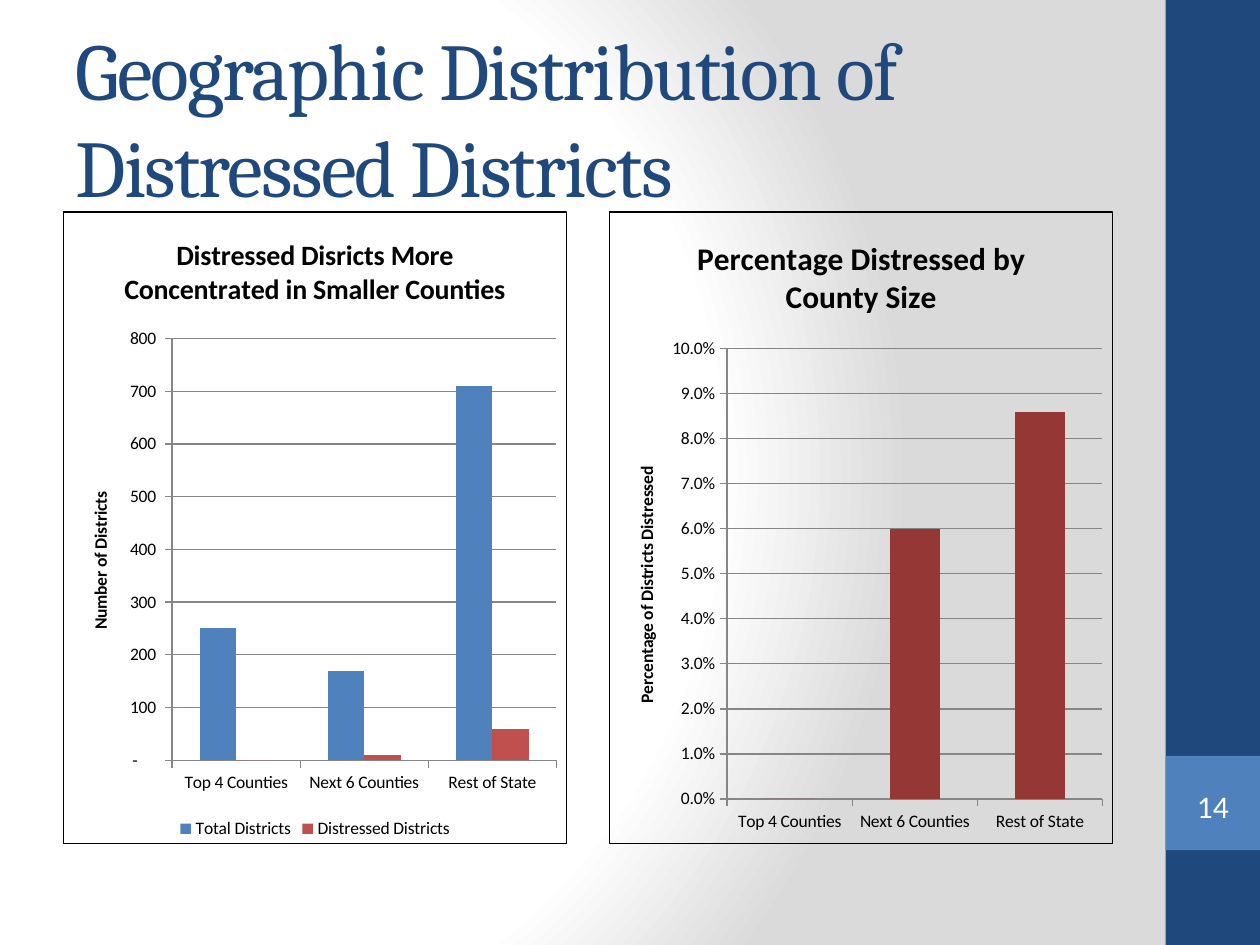
from lxml import etree
from pptx import Presentation
from pptx.chart.data import CategoryChartData
from pptx.dml.color import RGBColor
from pptx.enum.chart import XL_CHART_TYPE, XL_LEGEND_POSITION, XL_TICK_MARK
from pptx.enum.shapes import MSO_SHAPE
from pptx.enum.text import MSO_ANCHOR, MSO_AUTO_SIZE, PP_ALIGN
from pptx.oxml import parse_xml
from pptx.oxml.ns import qn
from pptx.util import Cm, Pt

DRAWING = 'xmlns:a="http://schemas.openxmlformats.org/drawingml/2006/main"'
CHART = 'xmlns:c="http://schemas.openxmlformats.org/drawingml/2006/chart"'
NAVY, BLUE, RED, DARK_RED = "1F497D", "4F81BD", "C0504D", "953735"
WHITE, GREY, BLACK, AXIS_GREY = "FFFFFF", "DADADA", "000000", "868686"
COUNTY_GROUPS = ["Top 4 Counties", "Next 6 Counties", "Rest of State"]


def colour(value):
    return RGBColor.from_string(value)


def format_text(frame, text, size, tint, font="Calibri", bold=False, align=None):
    frame.text = text
    para = frame.paragraphs[0]
    if align is not None:
        para.alignment = align
    span = para.runs[0]
    span.font.name, span.font.size, span.font.bold = font, Pt(size), bold
    span.font.color.rgb = colour(tint)
    return span


def place(shape, left, top, width, height):
    shape.left, shape.top = Cm(left), Cm(top)
    shape.width, shape.height = Cm(width), Cm(height)


def add_background(slide):
    slide.background.fill.gradient()
    gradient = next(slide.element.iter(qn("a:gradFill")))
    stops = "".join(
        f'<a:gs pos="{position * 1000}"><a:srgbClr val="{tint}"/></a:gs>'
        for position, tint in [(0, WHITE), (75, WHITE), (100, GREY)])
    gradient.getparent().replace(gradient, parse_xml(
        f'<a:gradFill {DRAWING} rotWithShape="1"><a:gsLst>{stops}</a:gsLst>'
        '<a:path path="circle"><a:fillToRect l="20000" t="50000" r="100000" b="50000"/>'
        '</a:path></a:gradFill>'))


def add_block(slide, kind, left, top, width, height, fill=None):
    box = slide.shapes.add_shape(kind, Cm(left), Cm(top), Cm(width), Cm(height))
    box.shadow.inherit = False
    box.line.fill.background()
    if fill:
        box.fill.solid()
        box.fill.fore_color.rgb = colour(fill)
    else:
        box.fill.background()
    return box


def add_sidebar(slide, left, top, width, height, number):
    # Band, square tile and page number
    tile_top = top + height * 0.8
    add_block(slide, MSO_SHAPE.RECTANGLE, left, top, width, height, NAVY)
    add_block(slide, MSO_SHAPE.RECTANGLE, left, tile_top, width, width, BLUE)
    label = add_block(slide, MSO_SHAPE.DOUBLE_BRACKET,
                      left + 0.2, tile_top + 0.45, width - 0.4, 1.1)
    label.adjustments[0] = 0.18
    frame = label.text_frame
    frame.margin_left = frame.margin_right = frame.margin_top = frame.margin_bottom = 0
    frame.vertical_anchor = MSO_ANCHOR.MIDDLE
    format_text(frame, number, 18, WHITE, align=PP_ALIGN.CENTER)


def add_title(slide, left, top, width, height, text):
    title = slide.shapes.title
    place(title, left, top, width, height)
    frame = title.text_frame
    frame.word_wrap = True
    frame.auto_size = MSO_AUTO_SIZE.NONE
    frame.vertical_anchor = MSO_ANCHOR.MIDDLE
    span = format_text(frame, text, 46, NAVY, font="Cambria", align=PP_ALIGN.LEFT)
    span.font._element.set("spc", "-100")


def add_chart_border(chart):
    border = parse_xml(
        f'<c:spPr {CHART} {DRAWING}><a:noFill/><a:ln w="{Pt(0.75)}"><a:solidFill>'
        f'<a:srgbClr val="{BLACK}"/></a:solidFill></a:ln></c:spPr>')
    chart.element.find(qn("c:chart")).addnext(border)


def format_axis(axis):
    axis.major_tick_mark = XL_TICK_MARK.OUTSIDE
    axis.minor_tick_mark = XL_TICK_MARK.NONE
    axis.format.line.color.rgb = colour(AXIS_GREY)


def add_columns(slide, left, top, width, height, title, title_size,
                axis_title, number_format, series, legend=False):
    data = CategoryChartData()
    data.categories = COUNTY_GROUPS
    for name, values, _ in series:
        data.add_series(name, values)
    chart = slide.shapes.add_chart(
        XL_CHART_TYPE.COLUMN_CLUSTERED, Cm(left), Cm(top), Cm(width), Cm(height), data).chart
    chart.font.name, chart.font.size = "Calibri", Pt(10)
    chart.font.color.rgb = colour(BLACK)
    add_chart_border(chart)

    # Heading and legend
    format_text(chart.chart_title.text_frame, title, title_size, BLACK, bold=True)
    chart.chart_title.include_text_in_layout = False
    chart.has_legend = legend
    if legend:
        chart.legend.position = XL_LEGEND_POSITION.BOTTOM
        chart.legend.include_in_layout = False

    # Axes
    format_axis(chart.category_axis)
    value_axis = chart.value_axis
    format_axis(value_axis)
    value_axis.has_major_gridlines = True
    value_axis.major_gridlines.format.line.color.rgb = colour(AXIS_GREY)
    value_axis.tick_labels.number_format = number_format
    value_axis.tick_labels.number_format_is_linked = False
    format_text(value_axis.axis_title.text_frame, axis_title, 10, BLACK, bold=True)

    # Columns
    plot = chart.plots[0]
    plot.gap_width, plot.overlap = 150, 0
    plot.vary_by_categories = False
    for columns, (_, _, tint) in zip(plot.series, series):
        columns.format.fill.solid()
        columns.format.fill.fore_color.rgb = colour(tint)


def main():
    deck = Presentation()
    deck.slide_width, deck.slide_height = Cm(25.4), Cm(19.05)
    slide = deck.slides.add_slide(deck.slide_layouts[5])
    add_background(slide)
    add_sidebar(slide, 23.5, 0, 1.9, 19.05, "14")
    add_title(slide, 1.27, 0.76, 21.16, 3.18,
              "Geographic Distribution of Distressed Districts")
    chart_top, chart_width, chart_height = 4.26, 10.16, 12.76
    add_columns(slide, 1.27, chart_top, chart_width, chart_height,
                "Distressed Disricts More Concentrated in Smaller Counties", 16,
                "Number of Districts",
                '_(* #,##0_);_(* \\(#,##0\\);_(* "-"??_);_(',
                [("Total Districts", [250, 170, 710], BLUE),
                 ("Distressed Districts", [0, 10, 60], RED)], legend=True)
    add_columns(slide, 12.28, chart_top, chart_width, chart_height,
                "Percentage Distressed by County Size", 18,
                "Percentage of Districts Distressed", "0.0%",
                [("Series 1", [0, 0.06, 0.086], DARK_RED)])
    deck.save("out.pptx")


if __name__ == "__main__":
    main()
